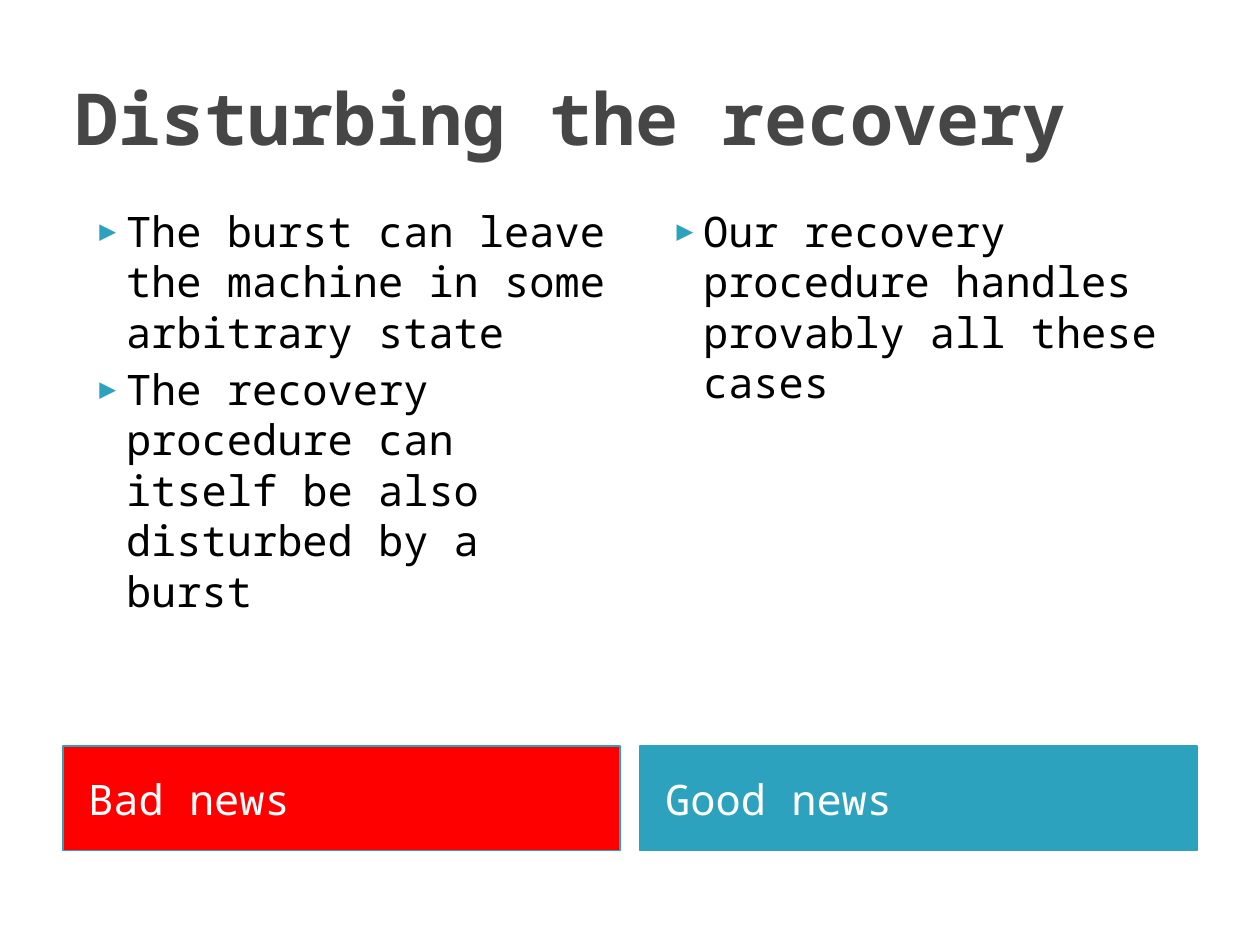
"""Build a slide that sets bad news beside good news about burst recovery."""
from dataclasses import dataclass

from lxml import etree
from pptx import Presentation
from pptx import util as u
from pptx.dml.color import RGBColor
from pptx.enum import text as t
from pptx.oxml.ns import qn

FONT = "Noto Sans Mono"
GREY = RGBColor(0x46, 0x46, 0x46)
BLACK = RGBColor(0, 0, 0)
WHITE = RGBColor(255, 255, 255)
RED = RGBColor(255, 0, 0)
TEAL = RGBColor(0x2D, 0xA2, 0xBF)

LEFT, WIDE, STEP = 0.5, 4.42, 4.58


@dataclass
class Column:
    label: str
    fill: RGBColor
    points: list[str]


COLUMNS = [
    Column("Bad news", RED, [
        "The burst can leave the machine in some arbitrary state",
        "The recovery procedure can itself be also disturbed by a burst",
    ]),
    Column("Good news", TEAL, [
        "Our recovery procedure handles provably all these cases",
    ]),
]


def place(shape, left: float, top: float, width: float, height: float) -> None:
    """Move and size a shape, in inches."""
    box = {"left": left, "top": top, "width": width, "height": height}
    for name, value in box.items():
        setattr(shape, name, u.Inches(value))


def write(para, words: str, size: int, color: RGBColor, bold: bool = False) -> None:
    """Add one formatted run to a left-aligned paragraph."""
    para.alignment = t.PP_ALIGN.LEFT
    run = para.add_run()
    run.text = words
    style = {"name": FONT, "size": u.Pt(size), "bold": bold}
    for name, value in style.items():
        setattr(run.font, name, value)
    run.font.color.rgb = color


def setup(shape, anchor, inset: float = 0.1):
    """Set the text frame's anchor and margins and return it."""
    frame = shape.text_frame
    style = {
        "word_wrap": True,
        "auto_size": t.MSO_AUTO_SIZE.NONE,
        "vertical_anchor": anchor,
        "margin_left": u.Inches(inset),
    }
    for name, value in style.items():
        setattr(frame, name, value)
    return frame


def bullet(para) -> None:
    """Give a paragraph a hanging teal triangle."""
    props = para._p.get_or_add_pPr()
    props.set("marL", str(u.Inches(0.4)))
    props.set("indent", str(u.Inches(-0.28)))
    color = etree.SubElement(props, qn("a:buClr"))
    etree.SubElement(color, qn("a:srgbClr"), val=str(TEAL))
    etree.SubElement(props, qn("a:buSzPct"), val="68000")
    etree.SubElement(props, qn("a:buFont"), typeface=FONT)
    etree.SubElement(props, qn("a:buChar"), char="▶")


def banner(shape, left: float, col: Column) -> None:
    """Draw the coloured label below a column."""
    place(shape, left, 5.92, WIDE, 0.83)
    shape.fill.solid()
    shape.fill.fore_color.rgb = col.fill
    shape.line.color.rgb = TEAL
    shape.line.width = u.Pt(0.75)
    frame = setup(shape, t.MSO_ANCHOR.MIDDLE, 0.2)
    para = frame.paragraphs[0]
    para.space_before = u.Pt(0)
    write(para, col.label, 24, WHITE)


def listing(shape, left: float, col: Column) -> None:
    """Fill a column with its bulleted points."""
    place(shape, left, 1.58, WIDE, 4.31)
    frame = setup(shape, t.MSO_ANCHOR.TOP)
    for num, point in enumerate(col.points):
        para = frame.add_paragraph() if num else frame.paragraphs[0]
        bullet(para)
        para.space_before = u.Pt(4 if num else 0)
        write(para, point, 24, BLACK)


def main() -> None:
    """Build and save the slide."""
    deck = Presentation()
    deck.slide_width, deck.slide_height = u.Inches(10), u.Inches(7.5)
    slide = deck.slides.add_slide(deck.slide_layouts[4])
    title, *rest = slide.placeholders
    place(title, LEFT, 0.3, 9, 1.25)
    frame = setup(title, t.MSO_ANCHOR.MIDDLE)
    write(frame.paragraphs[0], "Disturbing the recovery", 41, GREY, True)
    for num, col in enumerate(COLUMNS):
        left = LEFT + num * STEP
        label, body = rest[2 * num:2 * num + 2]
        banner(label, left, col)
        listing(body, left, col)
    deck.save("out.pptx")


if __name__ == "__main__":
    main()
